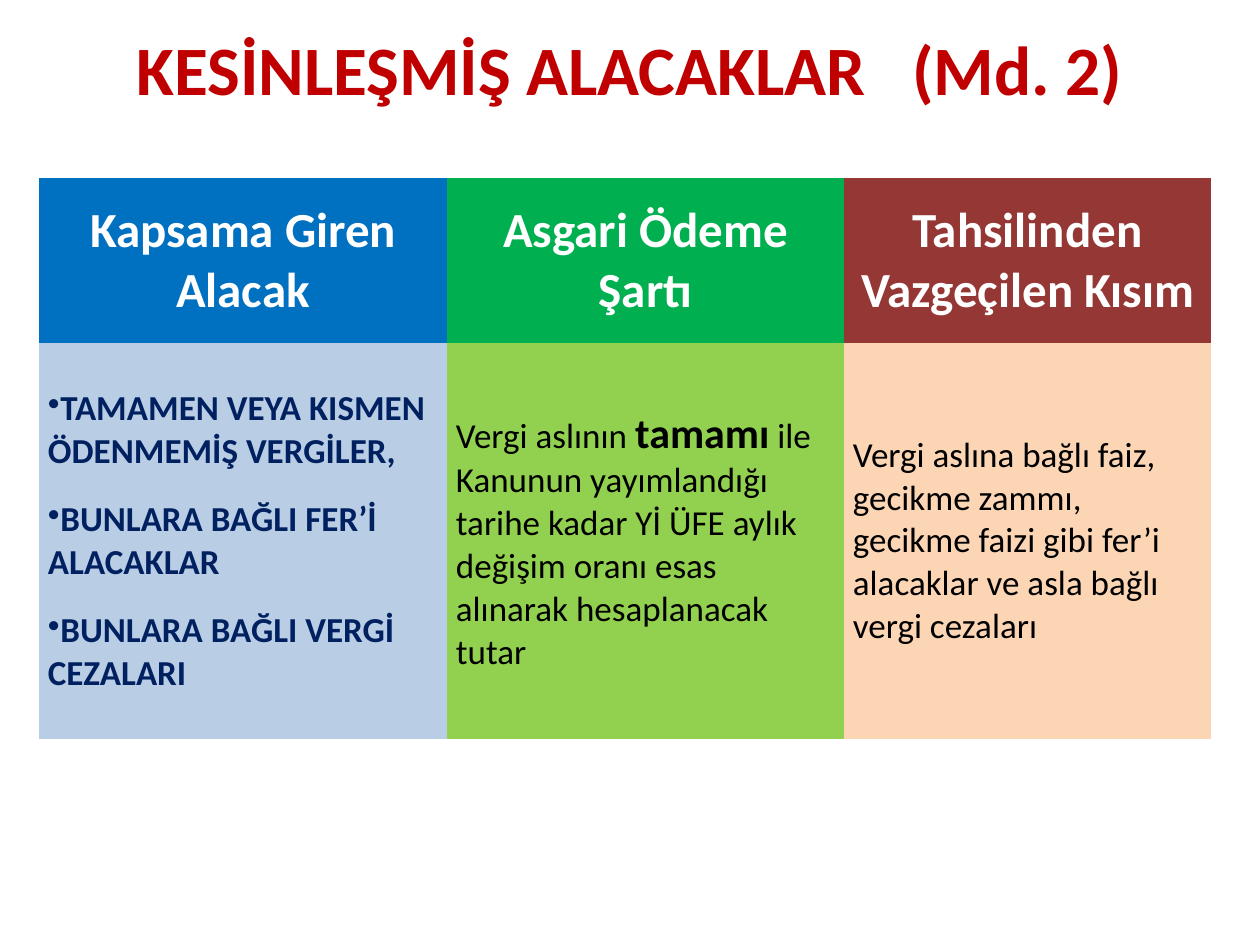
from lxml import etree
from pptx import Presentation
from pptx.dml.color import RGBColor
from pptx.enum.text import MSO_ANCHOR, MSO_AUTO_SIZE, PP_ALIGN
from pptx.oxml.ns import qn
from pptx.util import Pt

PX = 914400 / 126
CENTER, LEFT = PP_ALIGN.CENTER, PP_ALIGN.LEFT
MIDDLE = MSO_ANCHOR.MIDDLE
NO_AUTOFIT = MSO_AUTO_SIZE.NONE
FONT = "Calibri"
TITLE = "KESİNLEŞMİŞ ALACAKLAR   (Md. 2)"
ROW_HEIGHTS = [165, 396]

# Each paragraph is a list of (text, size, bold) spans
COLUMNS = [
    {
        "width": 408, "header": "Kapsama Giren Alacak", "header_fill": "0070C0",
        "fill": "B9CDE5", "color": "002060", "bullet": True,
        "body": [
            [("TAMAMEN VEYA KISMEN ÖDENMEMİŞ VERGİLER,", 20, True)],
            [("BUNLARA BAĞLI FER’İ ALACAKLAR", 20, True)],
            [("BUNLARA BAĞLI VERGİ CEZALARI", 20, True)],
        ],
    },
    {
        "width": 397, "header": "Asgari Ödeme Şartı", "header_fill": "00B050",
        "fill": "92D050", "color": "000000", "bullet": False,
        "body": [[
            ("Vergi aslının ", 20, False),
            ("tamamı", 24, True),
            (" ile Kanunun yayımlandığı tarihe kadar Yİ ÜFE aylık değişim "
             "oranı esas alınarak hesaplanacak tutar", 20, False),
        ]],
    },
    {
        "width": 367, "header": "Tahsilinden Vazgeçilen Kısım", "header_fill": "953735",
        "fill": "FCD5B5", "color": "000000", "bullet": False,
        "body": [[
            ("Vergi aslına bağlı faiz, gecikme zammı, gecikme faizi gibi fer’i "
             "alacaklar ve asla bağlı vergi cezaları", 20, False),
        ]],
    },
]


def px(length):
    return round(length * PX)


def rgb(value):
    return RGBColor.from_string(value)


def style_span(span, size, color, bold):
    font = span.font
    font.name, font.size, font.bold = FONT, Pt(size), bold
    font.color.rgb = rgb(color)


def add_bullet(para):
    properties = para._p.get_or_add_pPr()
    properties.set("marL", "0")
    properties.set("indent", "0")
    etree.SubElement(properties, qn("a:buChar")).set("char", "•")


def fill_cell(cell, paragraphs, fill, color, align, bullet=False):
    cell.fill.solid()
    cell.fill.fore_color.rgb = rgb(fill)
    cell.vertical_anchor = MIDDLE
    cell.margin_left = cell.margin_right = px(9)
    cell.margin_top = cell.margin_bottom = 0
    frame = cell.text_frame
    for index, spans in enumerate(paragraphs):
        para = frame.add_paragraph() if index else frame.paragraphs[0]
        para.alignment = align
        para.space_before = para.space_after = Pt(7.2)
        if bullet:
            add_bullet(para)
        for text, size, bold in spans:
            span = para.add_run()
            span.text = text
            style_span(span, size, color, bold)


def place_title(page, left, top, width, height):
    title = page.shapes.title
    title.left, title.top = px(left), px(top)
    title.width, title.height = px(width), px(height)
    frame = title.text_frame
    frame.text = TITLE
    frame.word_wrap = True
    frame.auto_size = NO_AUTOFIT
    frame.vertical_anchor = MIDDLE
    para = frame.paragraphs[0]
    para.alignment = CENTER
    style_span(para.runs[0], 39.6, "C00000", True)


def place_table(page, left, top):
    width = sum(column["width"] for column in COLUMNS)
    table = page.shapes.add_table(
        len(ROW_HEIGHTS), len(COLUMNS),
        px(left), px(top), px(width), px(sum(ROW_HEIGHTS))).table
    table.horz_banding = table.first_row = False
    # Remove the style's white rules between cells
    style = table._tbl.tblPr.find(qn("a:tableStyleId"))
    style.text = "{2D5ABB26-0587-4C30-8999-92F81FD0307C}"
    for row, height in zip(table.rows, ROW_HEIGHTS):
        row.height = px(height)
    for index, column in enumerate(COLUMNS):
        table.columns[index].width = px(column["width"])
        fill_cell(table.cell(0, index), [[(column["header"], 28, True)]],
                  column["header_fill"], "FFFFFF", CENTER)
        fill_cell(table.cell(1, index), column["body"], column["fill"],
                  column["color"], LEFT, column["bullet"])


def main():
    deck = Presentation()
    deck.slide_width, deck.slide_height = px(1260), px(945)
    page = deck.slides.add_slide(deck.slide_layouts[5])
    page.background.fill.solid()
    page.background.fill.fore_color.rgb = rgb("FFFFFF")
    place_title(page, 63, 38, 1134, 60)
    place_table(page, 39, 178)
    deck.save("out.pptx")


if __name__ == "__main__":
    main()
